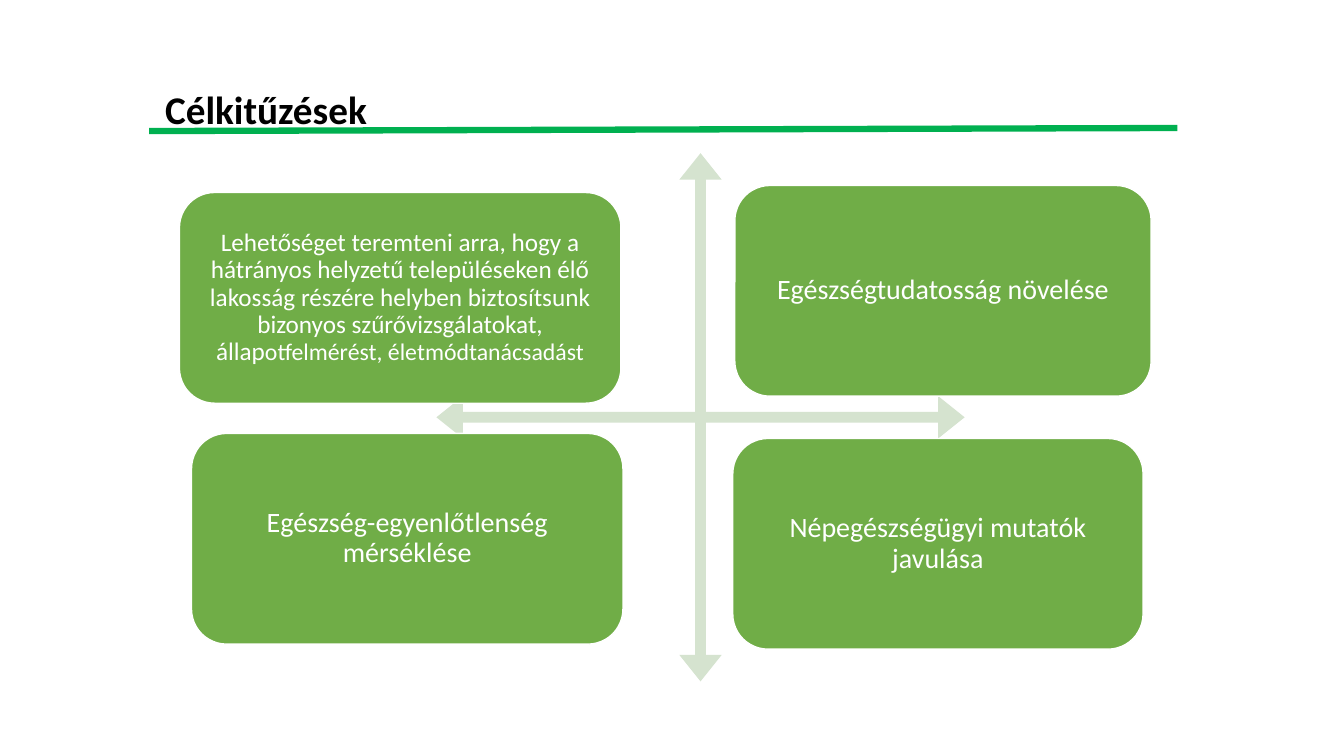
from pptx import Presentation
from pptx import util as u
from pptx.dml.color import RGBColor
from pptx.enum import shapes, text
from pptx.oxml.ns import qn
from lxml import etree

WHITE = RGBColor(0xFF, 0xFF, 0xFF)
BLACK = RGBColor(0, 0, 0)
LEAF = RGBColor(0x70, 0xAD, 0x47)
PALE = RGBColor(0xD5, 0xE3, 0xCF)
GREEN = RGBColor(0x00, 0xB0, 0x50)
CELL = u.Inches(0.1)
COLS, ROWS = 133.33, 75


def span(*cells):
    return [round(n * CELL) for n in cells]


def write(para, words, **form):
    run = para.add_run()
    run.text = words
    for key, val in {"name": "Calibri", "bold": False, **form}.items():
        if key == "color":
            run.font.color.rgb = val
        else:
            setattr(run.font, key, val)


deck = Presentation()
deck.slide_width, deck.slide_height = span(COLS, ROWS)
slide = deck.slides.add_slide(deck.slide_layouts[6])

head = slide.shapes.add_textbox(*span(15.4, 6.2, 115, 9.8)).text_frame
head.word_wrap = True
head.vertical_anchor = text.MSO_ANCHOR.MIDDLE
head.paragraphs[0].line_spacing = 0.9
write(head.paragraphs[0], "Célkitűzések", size=u.Pt(28), bold=True, color=BLACK)

cross = slide.shapes.add_shape(shapes.MSO_SHAPE.QUAD_ARROW, *span(43.3, 15.2, 52.4, 52.4))
cross.shadow.inherit = False
cross.fill.solid()
cross.fill.fore_color.rgb = PALE
cross.line.fill.background()
for i, part in enumerate((0.02, 0.04, 0.05)):
    cross.adjustments[i] = part

TALL = 20.9
cards = [
    (17.8, 19.1, 43.8, 0.7, [
        ("Lehetőséget teremteni arra, hogy a hátrányos helyzetű településeken élő "
         "lakosság részére helyben biztosítsunk bizonyos szűrővizsgálatokat, állap", 18),
        ("otfelmérést, életmódtanácsadást", 17)]),
    (72.9, 18.4, 41.3, 0.8, [("Egészségtudatosság növelése", 20)]),
    (19, 43, 42.8, 0.8, [("Egészség-egyenlőtlenség mérséklése", 20)]),
    (72.7, 43.5, 40.7, 0.8, [("Népegészségügyi mutatók javulása", 20)]),
]
for left, top, wide, pad, runs in cards:
    card = slide.shapes.add_shape(
        shapes.MSO_SHAPE.ROUNDED_RECTANGLE, *span(left, top, wide, TALL))
    card.shadow.inherit = False
    card.fill.solid()
    card.fill.fore_color.rgb = LEAF
    card.line.color.rgb = WHITE
    card.line.width = u.Pt(1)
    frame = card.text_frame
    inset = span(pad)[0]
    form = {"word_wrap": True, "vertical_anchor": text.MSO_ANCHOR.MIDDLE,
            "margin_left": inset, "margin_right": inset,
            "margin_top": inset, "margin_bottom": inset}
    for key, val in form.items():
        setattr(frame, key, val)
    para = frame.paragraphs[0]
    para.alignment = text.PP_ALIGN.CENTER
    para.line_spacing = 0.9
    for words, size in runs:
        write(para, words, size=u.Pt(size), color=WHITE)

rule = slide.shapes.add_connector(shapes.MSO_CONNECTOR.STRAIGHT, *span(14.8, 13, 116.8, 12.7))
rule.line.color.rgb = GREEN
rule.line.width = u.Pt(4.5)
etree.SubElement(rule._element.spPr, qn("a:effectLst"))

deck.save("out.pptx")
